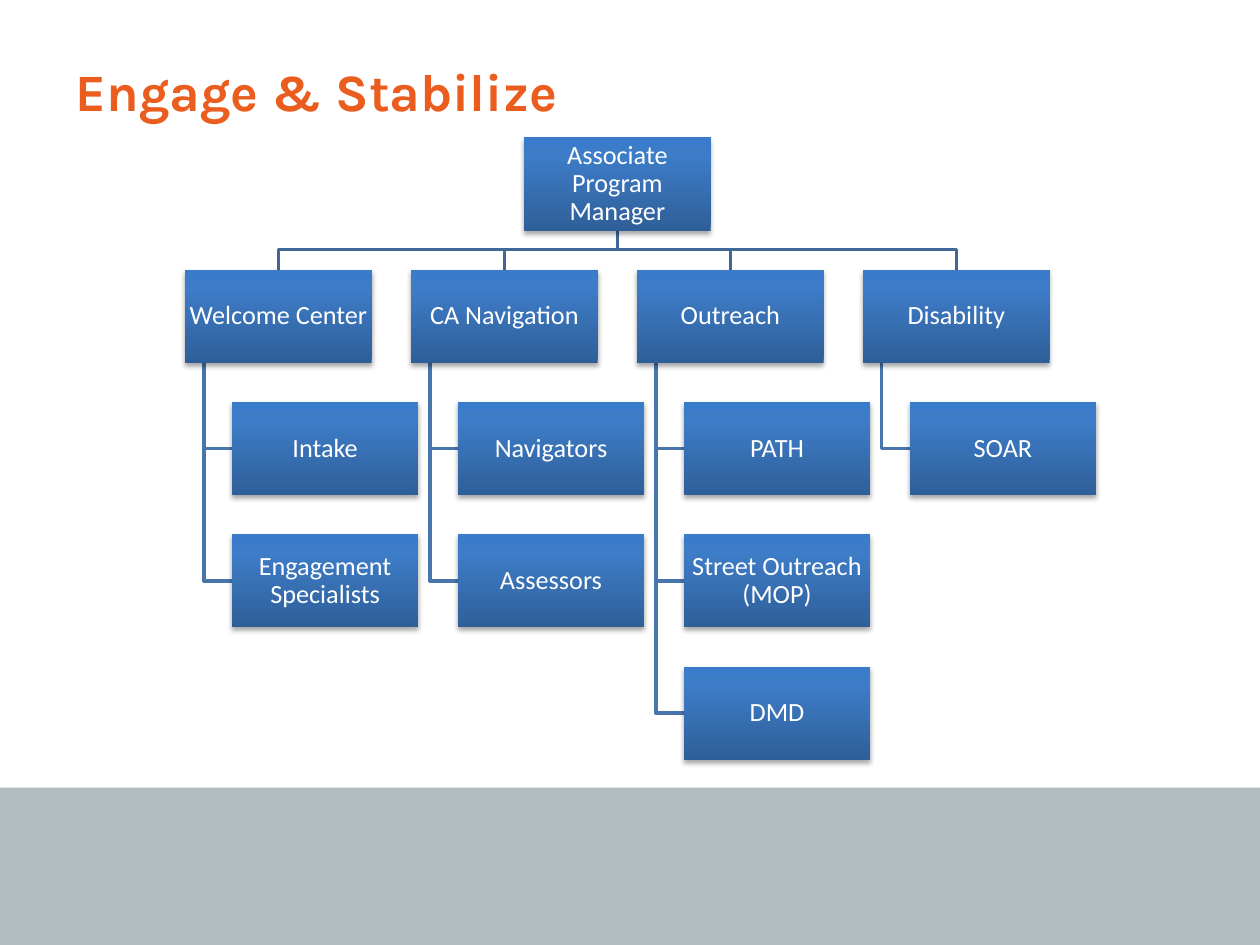
from lxml.etree import SubElement
from pptx import Presentation
from pptx.dml.color import RGBColor
from pptx.enum.shapes import MSO_SHAPE
from pptx.enum.text import MSO_ANCHOR, PP_ALIGN
from pptx.oxml import parse_xml
from pptx.oxml.ns import nsdecls, qn
from pptx.util import Inches, Pt

WHITE = RGBColor(0xFF, 0xFF, 0xFF)
ORANGE = RGBColor(0xEA, 0x5D, 0x1E)
GRAY = RGBColor(0xB0, 0xBC, 0xC0)
TRUNK = RGBColor(0x3F, 0x67, 0x97)
BRANCH = RGBColor(0x48, 0x75, 0xAC)
STOPS = (
    (0, RGBColor(0x2F, 0x5F, 0x99)),
    (80, RGBColor(0x3D, 0x7C, 0xC7)),
    (100, RGBColor(0x3A, 0x7C, 0xCB)),
)

BOX_W, BOX_H = 1.48, 0.74
ROOT_X, ROOT_Y = 4.16, 1.09
LEFT, LAST = 1.47, 6.85
ROW = 1.05
INDENT = 0.37
STEM = 0.15

ROOT = "Associate Program Manager"
TEAMS = (
    ("Welcome Center", ("Intake", "Engagement Specialists")),
    ("CA Navigation", ("Navigators", "Assessors")),
    ("Outreach", ("PATH", "Street Outreach (MOP)", "DMD")),
    ("Disability", ("SOAR",)),
)


def write(shape, text, font="Calibri", size=15, color=WHITE, bold=False,
          align=PP_ALIGN.CENTER, anchor=MSO_ANCHOR.MIDDLE, inset=0.01, line=0.9):
    frame = shape.text_frame
    frame.word_wrap = True
    frame.vertical_anchor = anchor
    if inset is not None:
        frame.margin_left = frame.margin_right = Inches(inset)
        frame.margin_top = frame.margin_bottom = Inches(inset)
    para = frame.paragraphs[0]
    para.alignment = align
    para.line_spacing = line
    para.space_before = Pt(0)
    run = para.add_run()
    run.text = text
    run.font.name = font
    run.font.size = Pt(size)
    run.font.bold = bold
    run.font.color.rgb = color


def add_rect(slide, x, y, w, h):
    shape = slide.shapes.add_shape(
        MSO_SHAPE.RECTANGLE, Inches(x), Inches(y), Inches(w), Inches(h))
    shape.shadow.inherit = False
    shape.line.fill.background()
    return shape


def add_band(slide):
    band = add_rect(slide, 0, 6.25, 10, 1.25)
    band.fill.solid()
    band.fill.fore_color.rgb = GRAY


def shade(shape):
    shape.fill.gradient()
    grad = shape._element.spPr.find(qn("a:gradFill"))
    stops = grad.find(qn("a:gsLst"))
    for stop in list(stops):
        stops.remove(stop)
    for pos, color in STOPS:
        stop = SubElement(stops, qn("a:gs"), pos=str(pos * 1000))
        SubElement(stop, qn("a:srgbClr"), val=str(color))
    grad.find(qn("a:lin")).set("ang", "16200000")


def cast(shape):
    effects = shape._element.spPr.find(qn("a:effectLst"))
    effects.append(parse_xml(
        f'<a:outerShdw {nsdecls("a")} blurRad="{Pt(3.1)}" dist="{Pt(1.8)}" '
        'dir="5400000" rotWithShape="0"><a:srgbClr val="000000">'
        '<a:alpha val="35000"/></a:srgbClr></a:outerShdw>'))


def add_box(slide, text, x, y):
    box = add_rect(slide, x, y, BOX_W, BOX_H)
    shade(box)
    cast(box)
    write(box, text)


def add_link(slide, points, color):
    spots = [(Inches(x), Inches(y)) for x, y in points]
    pen = slide.shapes.build_freeform(*spots[0])
    pen.add_line_segments(spots[1:], close=False)
    link = pen.convert_to_shape()
    link.shadow.inherit = False
    link.fill.background()
    link.line.color.rgb = color
    link.line.width = Pt(2)


def add_chart(slide):
    step = (LAST - LEFT) / (len(TEAMS) - 1)
    mid = ROOT_X + BOX_W / 2
    base = ROOT_Y + BOX_H
    top = ROOT_Y + ROW
    boxes = [(ROOT, ROOT_X, ROOT_Y)]
    for col, (team, units) in enumerate(TEAMS):
        x = LEFT + col * step
        hub = x + BOX_W / 2
        add_link(slide, [(mid, base), (mid, base + STEM),
                         (hub, base + STEM), (hub, top)], TRUNK)
        boxes.append((team, x, top))
        stem = x + BOX_W / 10
        for row, unit in enumerate(units, 1):
            y = top + row * ROW
            add_link(slide, [(stem, top + BOX_H), (stem, y + BOX_H / 2),
                             (x + INDENT, y + BOX_H / 2)], BRANCH)
            boxes.append((unit, x + INDENT, y))
    for box in boxes:
        add_box(slide, *box)


def add_title(slide, text):
    title = slide.shapes.title
    title.left, title.top = Inches(0.5), Inches(0.42)
    title.width, title.height = Inches(9), Inches(0.61)
    write(title, text, font="Karla", size=30, color=ORANGE, bold=True,
          align=PP_ALIGN.LEFT, anchor=MSO_ANCHOR.TOP, inset=None, line=1.0)


def main():
    deck = Presentation()
    deck.slide_width, deck.slide_height = Inches(10), Inches(7.5)
    slide = deck.slides.add_slide(deck.slide_layouts[5])
    add_band(slide)
    add_chart(slide)
    add_title(slide, "Engage & Stabilize")
    deck.save("out.pptx")


if __name__ == "__main__":
    main()
